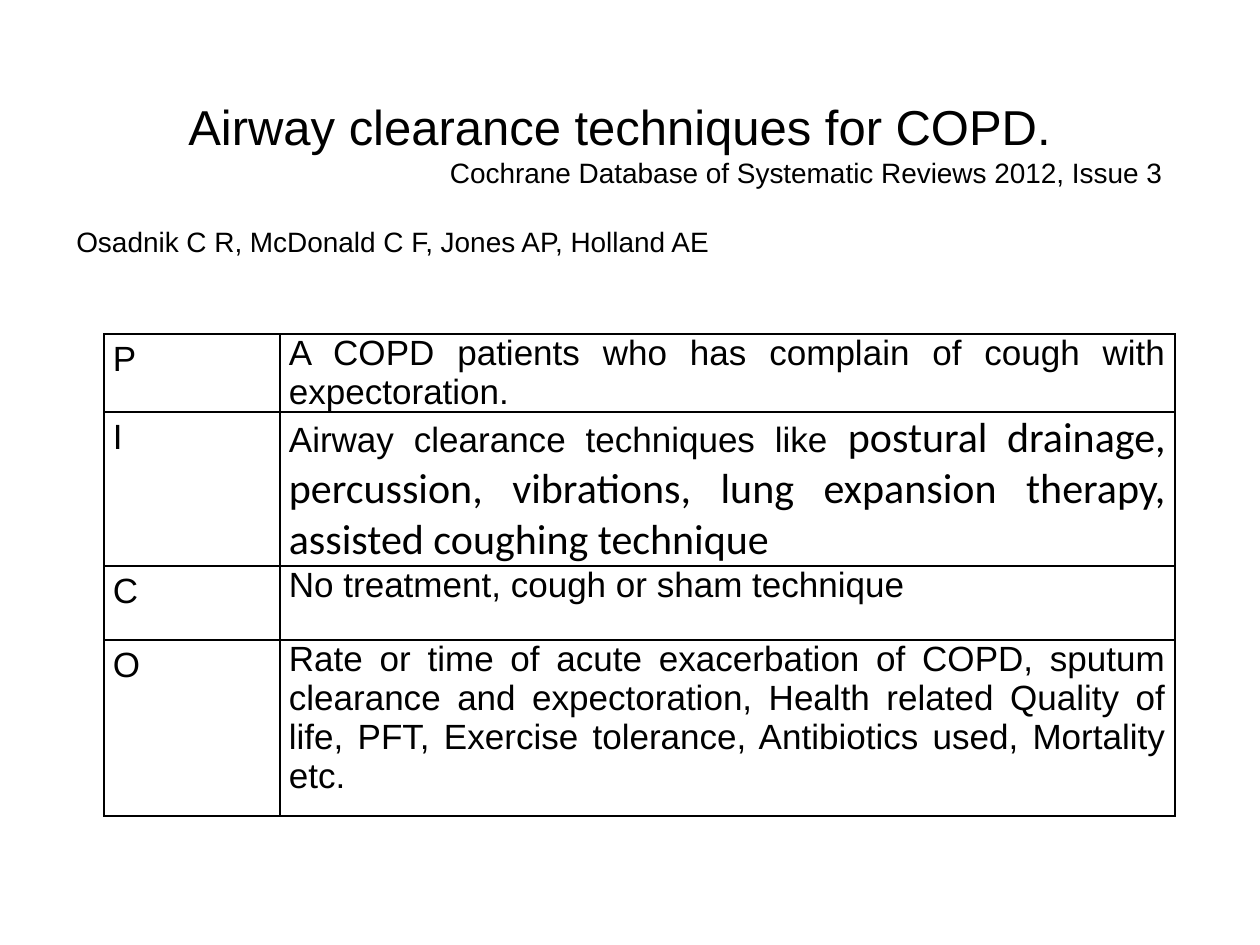
from lxml import etree
from pptx import Presentation
from pptx import util as u
from pptx.dml.color import RGBColor
from pptx.enum import text
from pptx.oxml.ns import qn

PX = 914400 // 126
COLORS = {"ink": "000000", "paper": "FFFFFF"}
ALIGN = text.PP_ALIGN

COLUMNS = [176, 895]
ROW_HEIGHTS = [74, 134, 74, 176]
# Each row: letter, then the runs of its description as (words, size, font)
PICO = [
    ("P", [("A COPD patients who has complain of cough with expectoration.", 20, "Arial")]),
    ("I", [("Airway clearance techniques like ", 20, "Arial"),
           ("postural drainage, percussion, vibrations, lung expansion therapy, "
            "assisted coughing technique", 24, "Calibri")]),
    ("C", [("No treatment, cough or sham technique", 20, "Arial")]),
    ("O", [("Rate or time of acute exacerbation of COPD, sputum clearance and "
            "expectoration, Health related Quality of life, PFT, Exercise tolerance, "
            "Antibiotics used, Mortality etc.", 20, "Arial")]),
]


def px(length):
    return u.Emu(length * PX)


def add_span(para, words, size, font="Arial"):
    span = para.add_run()
    span.text = words
    span.font.size = u.Pt(size)
    span.font.name = font
    span.font.color.rgb = RGBColor.from_string(COLORS["ink"])


def set_borders(cell, points=1):
    properties = cell._tc.get_or_add_tcPr()
    for position, side in enumerate(("lnL", "lnR", "lnT", "lnB")):
        line = etree.Element(qn(f"a:{side}"), w=str(u.Pt(points)))
        fill = etree.SubElement(line, qn("a:solidFill"))
        etree.SubElement(fill, qn("a:srgbClr"), val=COLORS["ink"])
        properties.insert(position, line)


def fill_cell(cell, spans, line_spacing=None):
    cell.margin_left = cell.margin_right = px(9)
    cell.margin_top = cell.margin_bottom = 0
    cell.fill.solid()
    cell.fill.fore_color.rgb = RGBColor.from_string(COLORS["paper"])
    set_borders(cell)
    para = cell.text_frame.paragraphs[0]
    para.alignment = ALIGN.JUSTIFY
    para.line_spacing = line_spacing
    for span in spans:
        add_span(para, *span)


def add_pico_table(page, left, top):
    table = page.shapes.add_table(
        len(PICO), len(COLUMNS), px(left), px(top),
        px(sum(COLUMNS)), px(sum(ROW_HEIGHTS))).table
    table.first_row = table.horz_banding = False
    for column, width in zip(table.columns, COLUMNS):
        column.width = px(width)
    for row, height, (letter, spans) in zip(table.rows, ROW_HEIGHTS, PICO):
        row.height = px(height)
        fill_cell(row.cells[0], [(letter, 20, "Arial")], line_spacing=1.15)
        fill_cell(row.cells[1], spans)


def add_heading(page, left, top, width, height):
    frame = page.shapes.add_textbox(px(left), px(top), px(width), px(height)).text_frame
    frame.word_wrap = True
    frame.margin_top = px(11)
    lines = [
        ("Airway clearance techniques for COPD.", 28, ALIGN.CENTER, 0),
        ("Cochrane Database of Systematic Reviews 2012, Issue 3", 16, ALIGN.RIGHT, 0),
        ("Osadnik C R, McDonald C F, Jones AP, Holland AE", 16, ALIGN.LEFT, 20),
    ]
    for number, (words, size, align, space) in enumerate(lines):
        para = frame.add_paragraph() if number else frame.paragraphs[0]
        para.alignment = align
        para.space_before = u.Pt(space)
        add_span(para, words, size)


def main():
    deck = Presentation()
    deck.slide_width, deck.slide_height = px(1260), px(945)
    page = deck.slides.add_slide(deck.slide_layouts[6])

    # Review question table
    add_pico_table(page, 104, 334)

    # Title, citation and authors
    add_heading(page, 64, 86, 1111, 212)

    deck.save("out.pptx")


if __name__ == "__main__":
    main()
